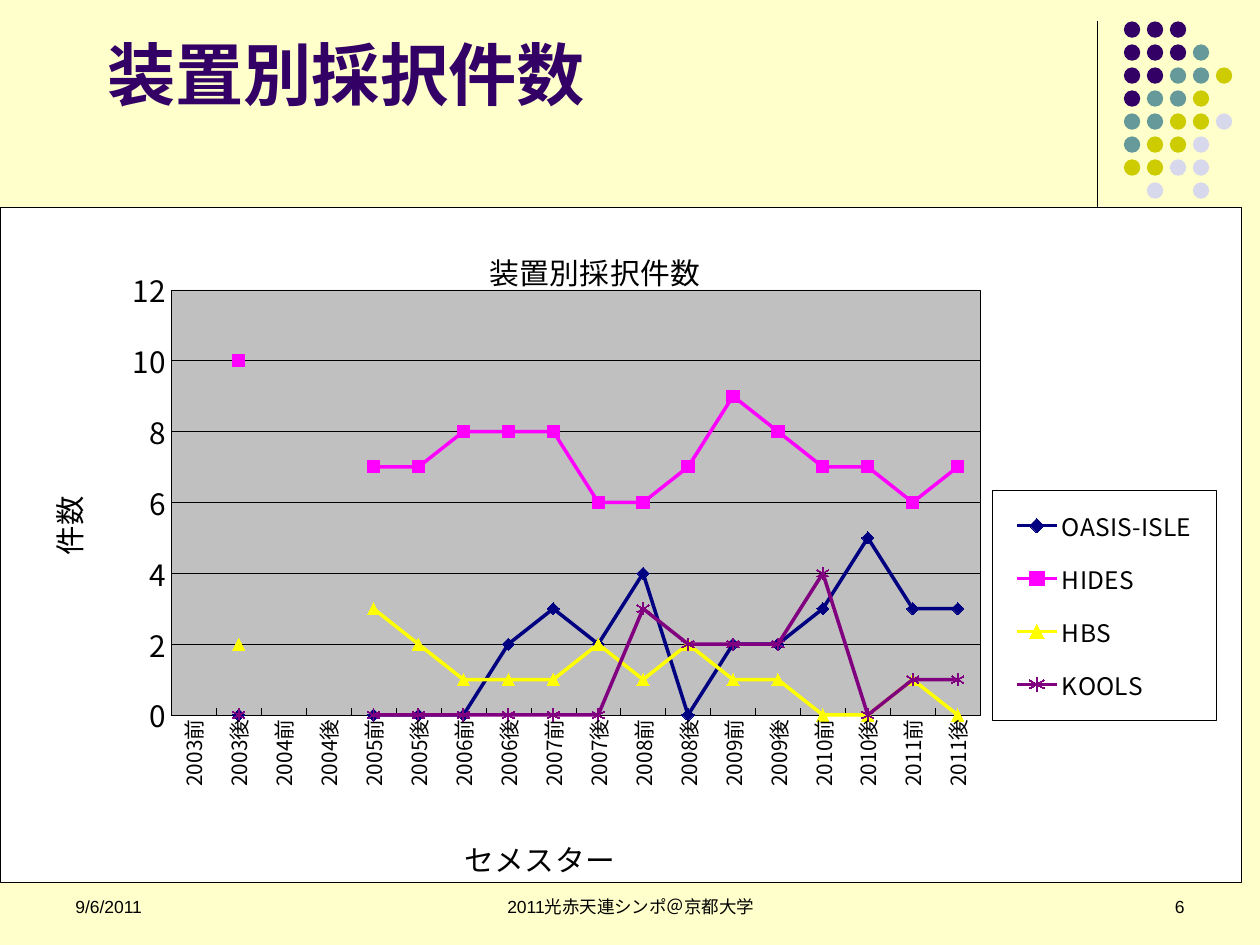
from lxml.etree import SubElement
from pptx import Presentation
from pptx.chart.data import CategoryChartData
from pptx.dml.color import RGBColor
from pptx.enum.chart import XL_CHART_TYPE as ChartType, XL_LEGEND_POSITION as LegendSide
from pptx.enum.chart import XL_MARKER_STYLE as Marker, XL_TICK_MARK as Tick
from pptx.enum.shapes import MSO_CONNECTOR as Connector, MSO_SHAPE as Shape
from pptx.enum.text import MSO_ANCHOR as Anchor, PP_ALIGN as Align
from pptx.oxml import parse_xml
from pptx.oxml.ns import nsdecls, qn
from pptx.util import Inches, Pt

CREAM = RGBColor(0xFF, 0xFF, 0xCC)
PURPLE = RGBColor(0x33, 0x00, 0x66)
TEAL = RGBColor(0x66, 0x99, 0x99)
OLIVE = RGBColor(0xCC, 0xCC, 0x00)
LAVENDER = RGBColor(0xD8, 0xD8, 0xEC)
BLACK = RGBColor(0x00, 0x00, 0x00)
WHITE = RGBColor(0xFF, 0xFF, 0xFF)
SILVER = RGBColor(0xC0, 0xC0, 0xC0)
NAVY = RGBColor(0x00, 0x00, 0x80)
MAGENTA = RGBColor(0xFF, 0x00, 0xFF)
YELLOW = RGBColor(0xFF, 0xFF, 0x00)
VIOLET = RGBColor(0x80, 0x00, 0x80)
LATIN, CJK = "Arial", "Noto Sans CJK JP"

HEADING = "装置別採択件数"
FOOTERS = [
    ("9/6/2011", 0.5, 2.33, Align.LEFT),
    ("2011光赤天連シンポ＠京都大学", 3.42, 3.17, Align.CENTER),
    ("6", 7.17, 2.33, Align.RIGHT),
]
DOT_ROWS = ["PPP", "PPPT", "PPTTO", "PTTO", "TTOOL", "TOOL", "OOLL", " L L"]
DOT_COLORS = {"P": PURPLE, "T": TEAL, "O": OLIVE, "L": LAVENDER}
DOT_LEFT, DOT_TOP, DOT_SIZE = 8.92, 0.17, 0.13
DOT_PITCH = (9.65 - DOT_LEFT) / 4

SEMESTERS = [f"{year}{half}" for year in range(2003, 2012) for half in "前後"]
SERIES = [
    ("OASIS-ISLE", NAVY, Marker.DIAMOND,
     [None, 0, None, None, 0, 0, 0, 2, 3, 2, 4, 0, 2, 2, 3, 5, 3, 3]),
    ("HIDES", MAGENTA, Marker.SQUARE,
     [None, 10, None, None, 7, 7, 8, 8, 8, 6, 6, 7, 9, 8, 7, 7, 6, 7]),
    ("HBS", YELLOW, Marker.TRIANGLE,
     [None, 2, None, None, 3, 2, 1, 1, 1, 2, 1, 2, 1, 1, 0, 0, 1, 0]),
    ("KOOLS", VIOLET, Marker.STAR,
     [None, 0, None, None, 0, 0, 0, 0, 0, 0, 3, 2, 2, 2, 4, 0, 1, 1]),
]


def style_font(font, size, color=BLACK, name=LATIN, bold=False):
    for key, value in {"size": Pt(size), "name": name, "bold": bold}.items():
        setattr(font, key, value)
    font.color.rgb = color


def style_line(line, color=BLACK, width=0.25):
    line.color.rgb = color
    line.width = Pt(width)


def set_east_asian_font(root):
    for latin in list(root.iter(qn("a:latin"))):
        latin.addnext(parse_xml(f'<a:ea {nsdecls("a")} typeface="{CJK}"/>'))


def place(element, index, **fractions):
    for old in element.findall(qn("c:layout")):
        element.remove(old)
    layout = parse_xml(f'<c:layout {nsdecls("c")}/>')
    manual = SubElement(layout, qn("c:manualLayout"))
    if element.tag == qn("c:plotArea"):
        SubElement(manual, qn("c:layoutTarget"), val="inner")
    for axis in "xy":
        SubElement(manual, qn(f"c:{axis}Mode"), val="edge")
    for key, value in fractions.items():
        SubElement(manual, qn(f"c:{key}"), val=str(value))
    element.insert(index, layout)


def area_format(fill):
    return parse_xml(
        f'<c:spPr {nsdecls("c", "a")}><a:solidFill><a:srgbClr val="{fill}"/></a:solidFill>'
        f'<a:ln w="{Pt(0.25)}"><a:solidFill><a:srgbClr val="{BLACK}"/></a:solidFill></a:ln></c:spPr>')


def write_chart_title(owner, title, text, x, y):
    title.text_frame.text = text
    style_font(title.text_frame.paragraphs[0].runs[0].font, 17, name=CJK)
    element = owner.find(qn("c:title"))
    place(element, 1, x=x, y=y)
    return element


def turn_upright(element):
    body = next(element.iter(qn("a:bodyPr")))
    body.set("rot", "-5400000")
    body.set("vert", "horz")


def add_dots(page):
    for row, codes in enumerate(DOT_ROWS):
        for column, code in enumerate(codes):
            if code in DOT_COLORS:
                dot = page.shapes.add_shape(
                    Shape.OVAL, Inches(DOT_LEFT + column * DOT_PITCH),
                    Inches(DOT_TOP + row * DOT_PITCH), Inches(DOT_SIZE), Inches(DOT_SIZE))
                dot.shadow.inherit = False
                dot.fill.solid()
                dot.fill.fore_color.rgb = DOT_COLORS[code]
                dot.line.fill.background()


def add_line_chart(page):
    data = CategoryChartData()
    data.categories = SEMESTERS
    for name, _, _, values in SERIES:
        data.add_series(name, values)
    chart = page.shapes.add_chart(
        ChartType.LINE_MARKERS, Inches(0), Inches(1.64), Inches(9.85), Inches(5.42), data).chart
    style_font(chart.font, 17, name=CJK)
    chart.has_title = True
    chart_part = chart.element.find(qn("c:chart"))
    write_chart_title(chart_part, chart.chart_title, HEADING, 0.39, 0.05)
    chart_part.addnext(area_format(WHITE))
    plot_area = chart_part.find(qn("c:plotArea"))
    place(plot_area, 0, x=0.138, y=0.123, w=0.652, h=0.63)
    plot_area.append(area_format(SILVER))

    semester, count = chart.category_axis, chart.value_axis
    for axis, size in [(semester, 12), (count, 17)]:
        axis.major_tick_mark, axis.minor_tick_mark = Tick.INSIDE, Tick.NONE
        style_font(axis.tick_labels.font, size, name=CJK)
        style_line(axis.format.line)
    turn_upright(semester.element.find(qn("c:txPr")) if hasattr(semester, "element")
                 else plot_area.find(qn("c:catAx")).find(qn("c:txPr")))
    count.minimum_scale, count.maximum_scale, count.major_unit = 0, 12, 2
    count.has_major_gridlines = True
    style_line(count.major_gridlines.format.line)
    write_chart_title(plot_area.find(qn("c:catAx")), semester.axis_title, "セメスター", 0.37, 0.92)
    turn_upright(write_chart_title(
        plot_area.find(qn("c:valAx")), count.axis_title, "件数", 0.03, 0.42))

    chart.has_legend = True
    legend = chart.legend
    legend.position = LegendSide.RIGHT
    legend.include_in_layout = False
    style_font(legend.font, 14, name=CJK)
    legend_part = chart_part.find(qn("c:legend"))
    place(legend_part, 1, x=0.8, y=0.42, w=0.18, h=0.34)
    legend_part.find(qn("c:txPr")).addprevious(area_format(WHITE))

    chart.plots[0].vary_by_categories = False
    for series, (_, color, marker, _) in zip(chart.plots[0].series, SERIES):
        series.smooth = False
        style_line(series.format.line, color, 2)
        series.marker.style, series.marker.size = marker, 7
        style_line(series.marker.format.line, color, 0.75)
        fill = series.marker.format.fill
        if marker == Marker.STAR:
            fill.background()
        else:
            fill.solid()
            fill.fore_color.rgb = color
    set_east_asian_font(chart.element)


def main():
    deck = Presentation()
    deck.slide_width, deck.slide_height = Inches(10), Inches(7.5)
    page = deck.slides.add_slide(deck.slide_layouts[5])
    page.background.fill.solid()
    page.background.fill.fore_color.rgb = CREAM

    rule = page.shapes.add_connector(
        Connector.STRAIGHT, Inches(8.71), Inches(0.17), Inches(8.71), Inches(1.83))
    style_line(rule.line, width=0.75)
    SubElement(rule.element.spPr, qn("a:effectLst"))
    add_dots(page)

    title = page.shapes.title
    title.left, title.top, title.width, title.height = map(Inches, (0.75, 0.21, 8.5, 1.04))
    title.text_frame.text = HEADING
    title.text_frame.vertical_anchor = Anchor.TOP
    title.text_frame.paragraphs[0].alignment = Align.LEFT
    style_font(title.text_frame.paragraphs[0].runs[0].font, 39, PURPLE, bold=True)

    add_line_chart(page)
    for text, left, width, align in FOOTERS:
        box = page.shapes.add_textbox(Inches(left), Inches(7.06), Inches(width), Inches(0.27))
        frame = box.text_frame
        frame.word_wrap = True
        frame.vertical_anchor = Anchor.MIDDLE
        frame.text = text
        frame.paragraphs[0].alignment = align
        style_font(frame.paragraphs[0].runs[0].font, 10)
    set_east_asian_font(page.element)
    deck.save("out.pptx")


if __name__ == "__main__":
    main()
